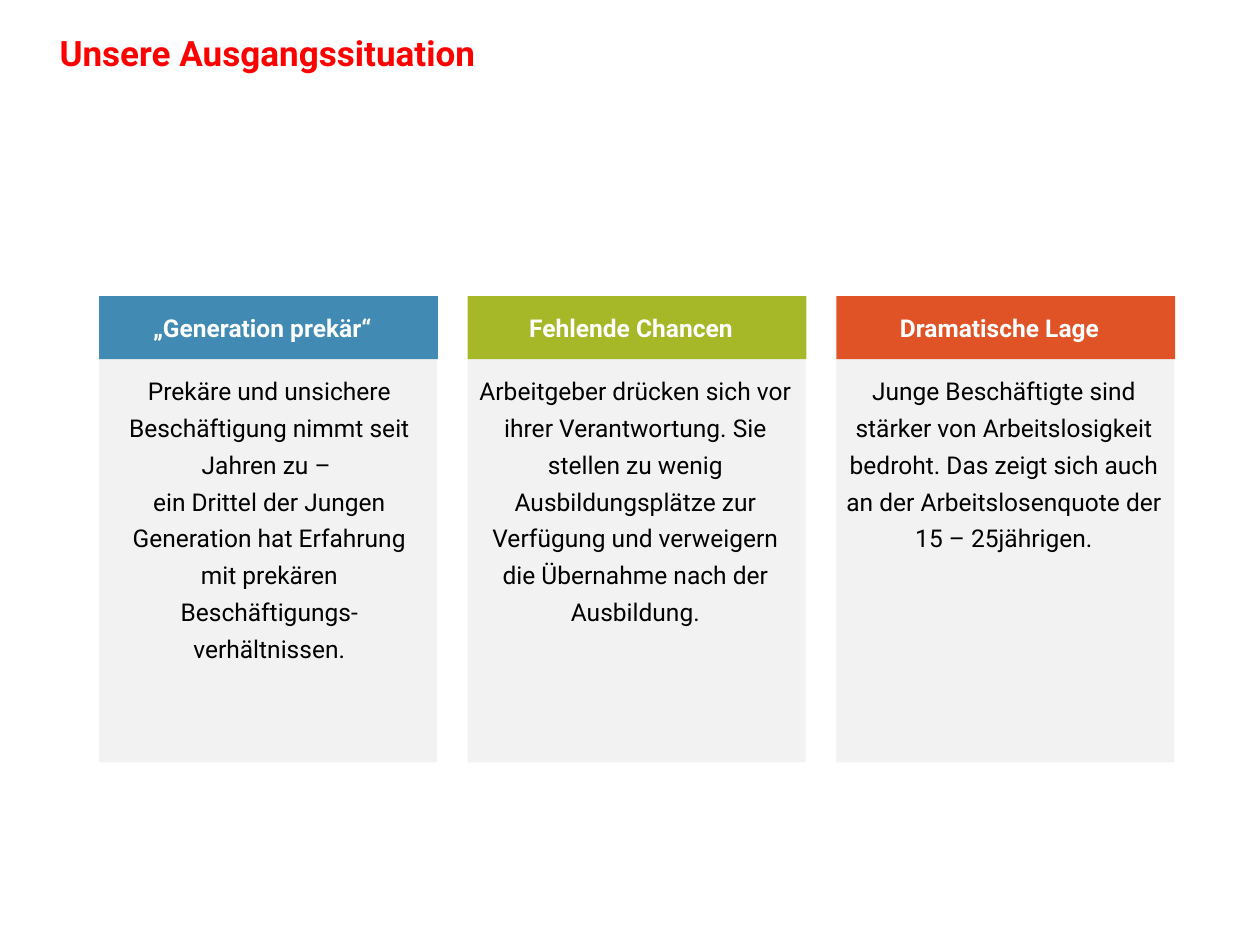
from dataclasses import dataclass

from pptx import Presentation
from pptx.dml.color import RGBColor
from pptx.enum.shapes import MSO_SHAPE as Shape
from pptx.enum.text import MSO_ANCHOR as Anchor, PP_ALIGN as Align
from pptx.util import Cm, Pt


@dataclass(frozen=True)
class Theme:
    font: str = "Roboto"
    title_size: int = 20
    text_size: int = 14
    title: str = "FF0000"
    heading: str = "FFFFFF"
    body: str = "000000"
    panel: str = "F2F2F2"
    blue: str = "418AB3"
    green: str = "A6B727"
    orange: str = "DF5327"


THEME = Theme()

COLUMNS = [
    ("„Generation prekär“", THEME.blue, 0.3,
     "Prekäre und unsichere Beschäftigung nimmt seit Jahren zu – \n"
     "ein Drittel der Jungen Generation hat Erfahrung mit prekären "
     "Beschäftigungs-verhältnissen."),
    ("Fehlende Chancen", THEME.green, 0.2,
     "Arbeitgeber drücken sich vor ihrer Verantwortung. Sie stellen zu wenig "
     "Ausbildungsplätze zur Verfügung und verweigern die Übernahme nach der "
     "Ausbildung."),
    ("Dramatische Lage", THEME.orange, 0.2,
     "Junge Beschäftigte sind stärker von Arbeitslosigkeit bedroht. Das zeigt "
     "sich auch an der Arbeitslosenquote der 15 – 25jährigen."),
]


def write_text(shape, text, size, color, bold, align, spacing, anchor, insets):
    frame = shape.text_frame
    frame.word_wrap = True
    frame.vertical_anchor = anchor
    (frame.margin_left, frame.margin_top,
     frame.margin_right, frame.margin_bottom) = map(Cm, insets)
    paragraph = frame.paragraphs[0]
    paragraph.text = text
    paragraph.alignment = align
    paragraph.line_spacing = spacing
    paragraph.space_before = Pt(0)
    for run in paragraph.runs:
        run.font.name = THEME.font
        run.font.size = Pt(size)
        run.font.bold = bold
        run.font.color.rgb = RGBColor.from_string(color)


def add_panel(slide, left, top, width, height, fill):
    panel = slide.shapes.add_shape(
        Shape.RECTANGLE, Cm(left), Cm(top), Cm(width), Cm(height))
    panel.shadow.inherit = False
    panel.fill.solid()
    panel.fill.fore_color.rgb = RGBColor.from_string(fill)
    panel.line.fill.background()
    return panel


def add_title(slide, text, left, top, width, height):
    title = slide.shapes.title
    title.left, title.top = Cm(left), Cm(top)
    title.width, title.height = Cm(width), Cm(height)
    write_text(title, text, THEME.title_size, THEME.title, True,
               Align.LEFT, 0.9, Anchor.MIDDLE, (0, 0.25, 0.25, 0))


def add_column(slide, column, left, top, width, height, heading_height=1.27):
    heading, color, inset, text = column
    body = add_panel(slide, left, top + heading_height,
                     width - 0.02, height - heading_height, THEME.panel)
    write_text(body, text, THEME.text_size, THEME.body, False,
               Align.CENTER, 1.25, Anchor.TOP, (inset, 0.2, 0.25, 0.13))
    header = add_panel(slide, left, top, width, heading_height, color)
    write_text(header, heading, THEME.text_size, THEME.heading, True,
               Align.CENTER, 1.25, Anchor.MIDDLE, (0, 0, 0.25, 0.13))


def add_columns(slide, columns, left, top, width, height, gap=0.6):
    column_width = (width - gap * (len(columns) - 1)) / len(columns)
    for index, column in enumerate(columns):
        add_column(slide, column, left + index * (column_width + gap), top,
                   column_width, height)


def main():
    presentation = Presentation()
    presentation.slide_width, presentation.slide_height = Cm(25.4), Cm(19.05)
    slide = presentation.slides.add_slide(presentation.slide_layouts[5])
    add_title(slide, "Unsere Ausgangssituation", 1.2, 0.33, 18.6, 1.3)
    add_columns(slide, COLUMNS, 2, 5.97, 21.69, 9.4)
    presentation.save("out.pptx")


if __name__ == "__main__":
    main()
